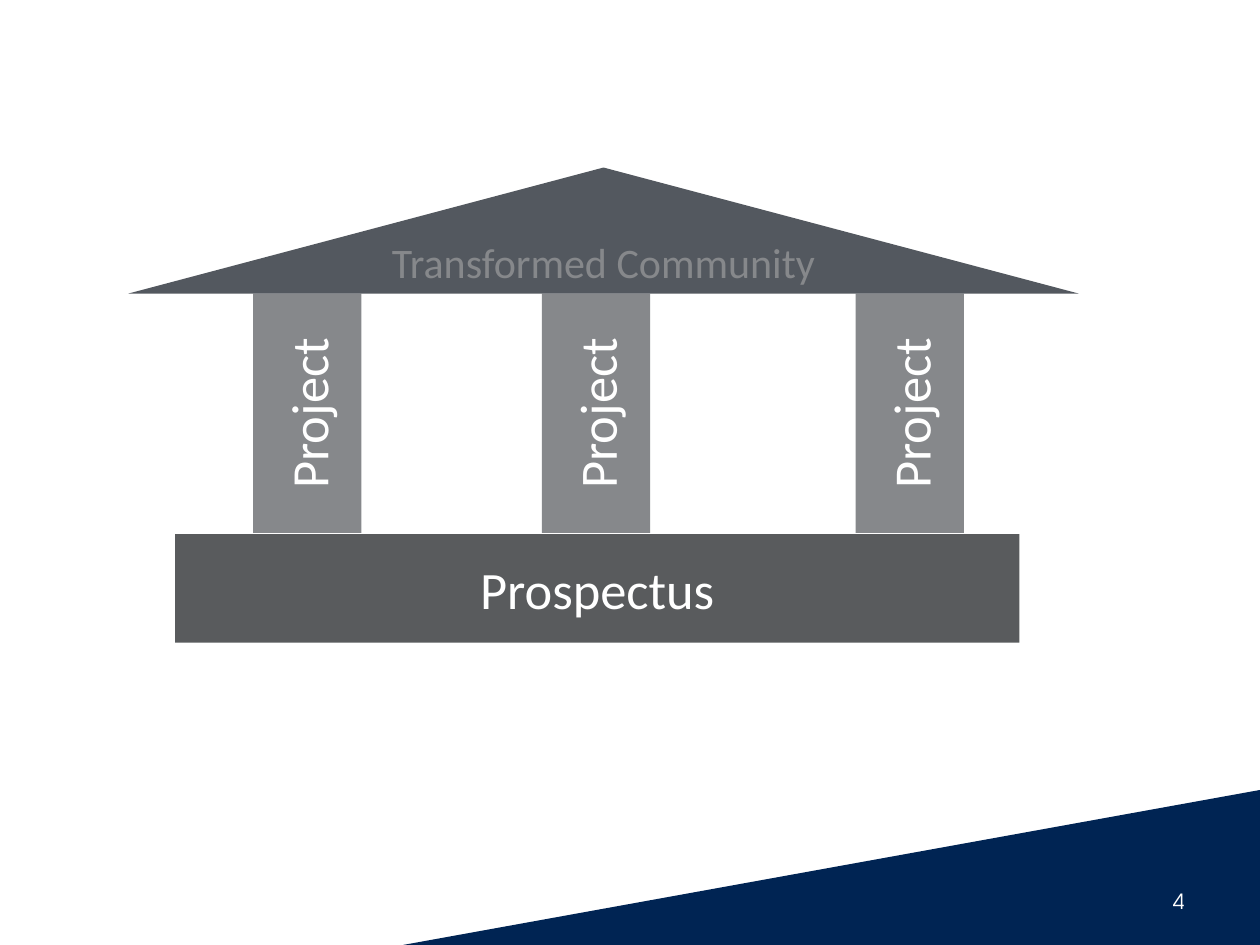
from dataclasses import dataclass

from pptx import Presentation
from pptx import util as u
from pptx.dml.color import RGBColor
from pptx.enum import shapes, text


@dataclass(frozen=True)
class Theme:
    """Colours, fonts and type sizes of the slide."""
    navy: str = "002453"
    base: str = "595B5D"
    pillar: str = "86888B"
    roof: str = "53585F"
    white: str = "FFFFFF"
    body_font: str = "Calibri"
    number_font: str = "TeX Gyre Adventor"
    large: int = 30
    medium: int = 24
    small: int = 12


def write(box, words, *, size, color, font, align=text.PP_ALIGN.CENTER):
    """Put one formatted, vertically centred line into a box."""
    frame = box.text_frame
    frame.word_wrap = True
    frame.vertical_anchor = text.MSO_ANCHOR.MIDDLE
    para = frame.paragraphs[0]
    para.alignment = align
    span = para.add_run()
    span.text = words
    span.font.size = u.Pt(size)
    span.font.name = font
    span.font.color.rgb = RGBColor.from_string(color)


class Painter:
    def __init__(self, slide, theme):
        self.slide = slide
        self.theme = theme

    def shape(self, kind, place, fill, parent=None):
        owner = parent or self.slide
        box = owner.shapes.add_shape(kind, *map(u.Inches, place))
        box.shadow.inherit = False
        box.fill.solid()
        box.fill.fore_color.rgb = RGBColor.from_string(fill)
        box.line.fill.background()
        return box

    def block(self, group, kind, place, fill, words, size=None, color=None, turn=0):
        """Add a labelled part of the building."""
        box = self.shape(kind, place, fill, group)
        box.rotation = turn
        write(box, words, size=size or self.theme.large,
              color=color or self.theme.white, font=self.theme.body_font)

    def corner(self, place):
        """Add the right triangle that rises towards the right edge."""
        wedge = self.shape(shapes.MSO_SHAPE.RIGHT_TRIANGLE, place, self.theme.navy)
        wedge.element.spPr.xfrm.set("flipH", "1")

    def page_number(self, place, number):
        box = self.slide.shapes.add_textbox(*map(u.Inches, place))
        write(box, number, size=self.theme.small, color=self.theme.white,
              font=self.theme.number_font, align=text.PP_ALIGN.RIGHT)


def main():
    theme = Theme()
    deck = Presentation()
    deck.slide_width, deck.slide_height = u.Inches(10), u.Inches(7.5)
    page = deck.slides.add_slide(deck.slide_layouts[6])
    painter = Painter(page, theme)
    rectangle = shapes.MSO_SHAPE.RECTANGLE

    # Corner decoration
    painter.corner((3.2, 6.27, 6.8, 1.23))

    # Building: base, pillars, roof
    building = page.shapes.add_group_shape()
    painter.block(building, rectangle, (1.39, 4.24, 6.7, 0.86), theme.base, "Prospectus")
    for left in (1.49, 3.78, 6.27):
        painter.block(building, rectangle, (left, 2.85, 1.9, 0.86),
                      theme.pillar, "Project", turn=270)
    painter.block(building, shapes.MSO_SHAPE.ISOSCELES_TRIANGLE, (1.02, 1.33, 7.54, 1),
                  theme.roof, "Transformed Community",
                  size=theme.medium, color=theme.pillar)

    # Slide number
    painter.page_number((7.17, 6.95, 2.33, 0.4), "4")

    deck.save("out.pptx")


if __name__ == "__main__":
    main()
